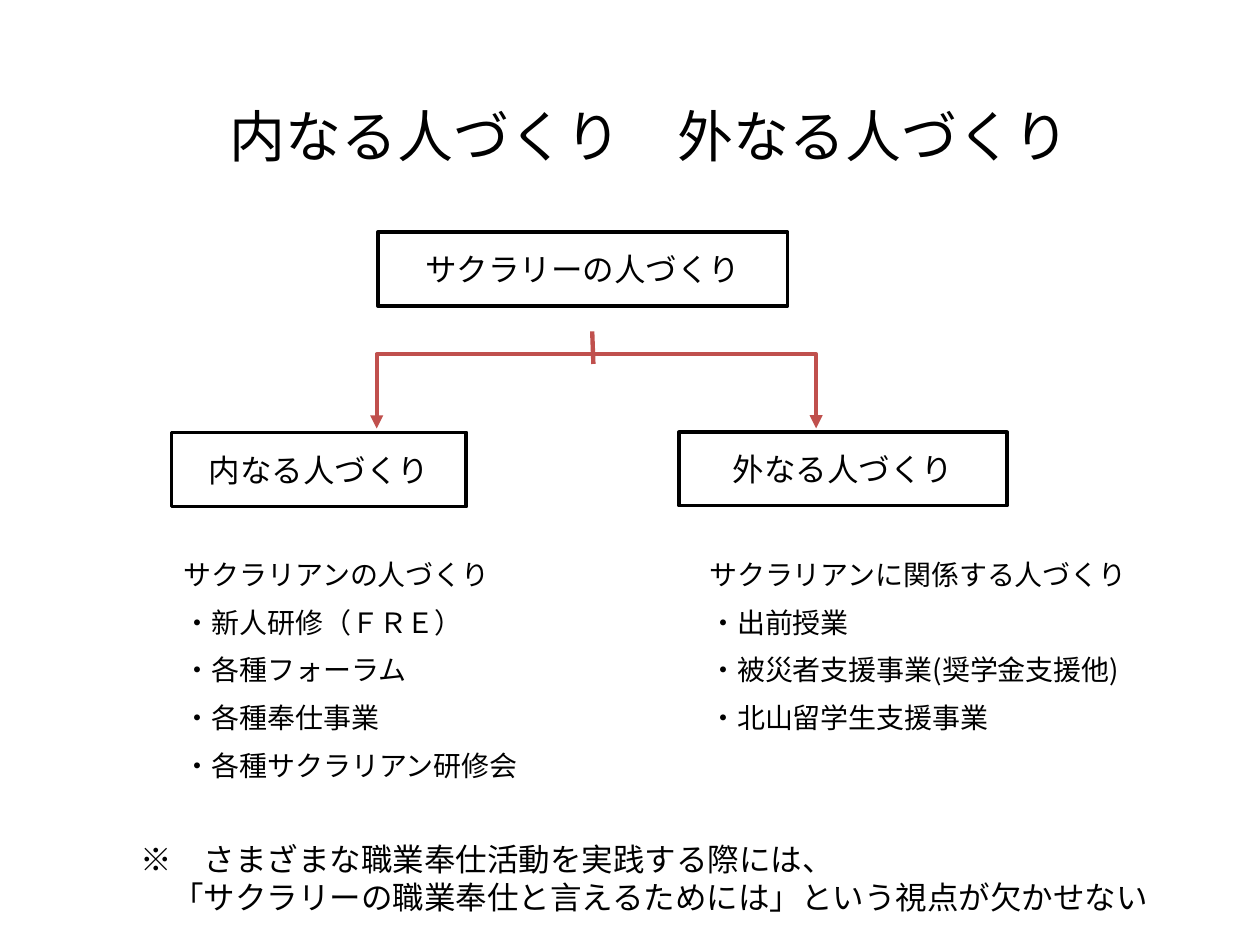
from typing import NamedTuple

import pptx
import pptx.dml.color
import pptx.enum.shapes
import pptx.enum.text
import pptx.oxml.ns
import pptx.oxml.xmlchemy
import pptx.util
from lxml import etree

Pt = pptx.util.Pt
FONT = "Noto Sans CJK JP"
BLACK, RED = "000000", "C0504D"
LEFT = pptx.enum.text.PP_ALIGN.LEFT
MID = pptx.enum.text.PP_ALIGN.CENTER
LINK = pptx.enum.shapes.MSO_CONNECTOR
qn = pptx.oxml.ns.qn


class Box(NamedTuple):
    x: float
    y: float
    w: float
    h: float
    text: str


class Note(NamedTuple):
    x: float
    y: float
    w: float
    h: float
    size: float
    lines: list[str]
    gap: float = 0
    wrap: bool = True
    align: int = LEFT
    inset: tuple[float, float] = (7.2, 4.8)


BOXES = [
    Box(216, 132.5, 234, 42.5, "サクラリーの人づくり"),
    Box(388, 247, 187.5, 42, "外なる人づくり"),
    Box(98, 247, 168.5, 42.5, "内なる人づくり"),
]
NOTES = [
    Note(54.7, 37.4, 621.4, 115.2, 32, ["内なる人づくり　外なる人づくり"],
         align=MID, inset=(19, 20.4)),
    Note(98, 314, 234.7, 143.3, 16,
         ["サクラリアンの人づくり", "・新人研修（ＦＲＥ）", "・各種フォーラム",
          "・各種奉仕事業", "・各種サクラリアン研修会"], gap=8),
    Note(398.2, 314, 278, 143.3, 16,
         ["サクラリアンに関係する人づくり", "・出前授業",
          "・被災者支援事業(奨学金支援他)", "・北山留学生支援事業"], gap=8),
    Note(73.4, 475.2, 596.2, 51.1, 18,
         ["※　さまざまな職業奉仕活動を実践する際には、",
          "　「サクラリーの職業奉仕と言えるためには」という視点が欠かせない"],
         wrap=False),
]


def tint(code: str) -> pptx.dml.color.RGBColor:
    return pptx.dml.color.RGBColor.from_string(code)


def write(frame, lines: list[str], size: float, align: int, gap: float = 0) -> None:
    """Fill a text frame with one paragraph per line, in the slide's font."""
    for i, line in enumerate(lines):
        para = frame.paragraphs[0] if i == 0 else frame.add_paragraph()
        run = para.add_run()
        run.text = line
        para.alignment = align
        para.line_spacing = Pt(round(size * 1.2, 1))
        para.space_before = Pt(gap if i else 0)
        para.font.size = Pt(size)
        para.font.name = FONT
        para.font.color.rgb = tint(BLACK)
        # East Asian glyphs take their typeface from the run
        etree.SubElement(run.font._element, qn("a:ea"), typeface=FONT)


def draw_box(slide, box: Box) -> None:
    shape = slide.shapes.add_shape(
        pptx.enum.shapes.MSO_SHAPE.RECTANGLE, *map(Pt, box[:4]))
    shape.shadow.inherit = False
    shape.fill.background()
    shape.line.color.rgb = tint(BLACK)
    shape.line.width = Pt(2)
    frame = shape.text_frame
    frame.word_wrap = False
    frame.vertical_anchor = pptx.enum.text.MSO_ANCHOR.MIDDLE
    write(frame, [box.text], 18, MID)


def draw_note(slide, note: Note) -> None:
    frame = slide.shapes.add_textbox(*map(Pt, note[:4])).text_frame
    frame.word_wrap = note.wrap
    frame.margin_left, frame.margin_top = map(Pt, note.inset)
    write(frame, note.lines, note.size, note.align, note.gap)


def draw_link(slide, kind: int, *ends: float):
    link = slide.shapes.add_connector(kind, *map(Pt, ends))
    link.line.color.rgb = tint(RED)
    link.line.width = Pt(2.5)
    etree.SubElement(link._element.spPr, qn("a:effectLst"))
    return link


def draw_fork(slide, left: float, right: float, top: float, foot: float) -> None:
    """Draw a bracket with an arrowhead at each foot, as a turned elbow."""
    thin, span = 0.1, right - left
    x, y = (left + right - thin) / 2, foot - span / 2
    fork = draw_link(slide, LINK.ELBOW, x, y, x + thin, y + span)
    props = fork._element.spPr
    props.find(qn("a:xfrm")).set("rot", str(270 * 60000))
    guides = props.find(qn("a:prstGeom")).find(qn("a:avLst"))
    bend = round((foot - top) / thin * 100000)
    etree.SubElement(guides, qn("a:gd"), name="adj1", fmla=f"val {bend}")
    for end in ("a:headEnd", "a:tailEnd"):
        etree.SubElement(props.find(qn("a:ln")), qn(end), type="triangle")


def main() -> None:
    deck = pptx.Presentation()
    deck.slide_width, deck.slide_height = Pt(720), Pt(540)
    slide = deck.slides.add_slide(deck.slide_layouts[6])
    for box in BOXES:
        draw_box(slide, box)
    draw_link(slide, LINK.STRAIGHT, 338.4, 189.4, 339.1, 208)
    draw_fork(slide, left=215.3, right=466.4, top=207.4, foot=244.8)
    for note in NOTES:
        draw_note(slide, note)
    deck.save("out.pptx")


if __name__ == "__main__":
    main()
